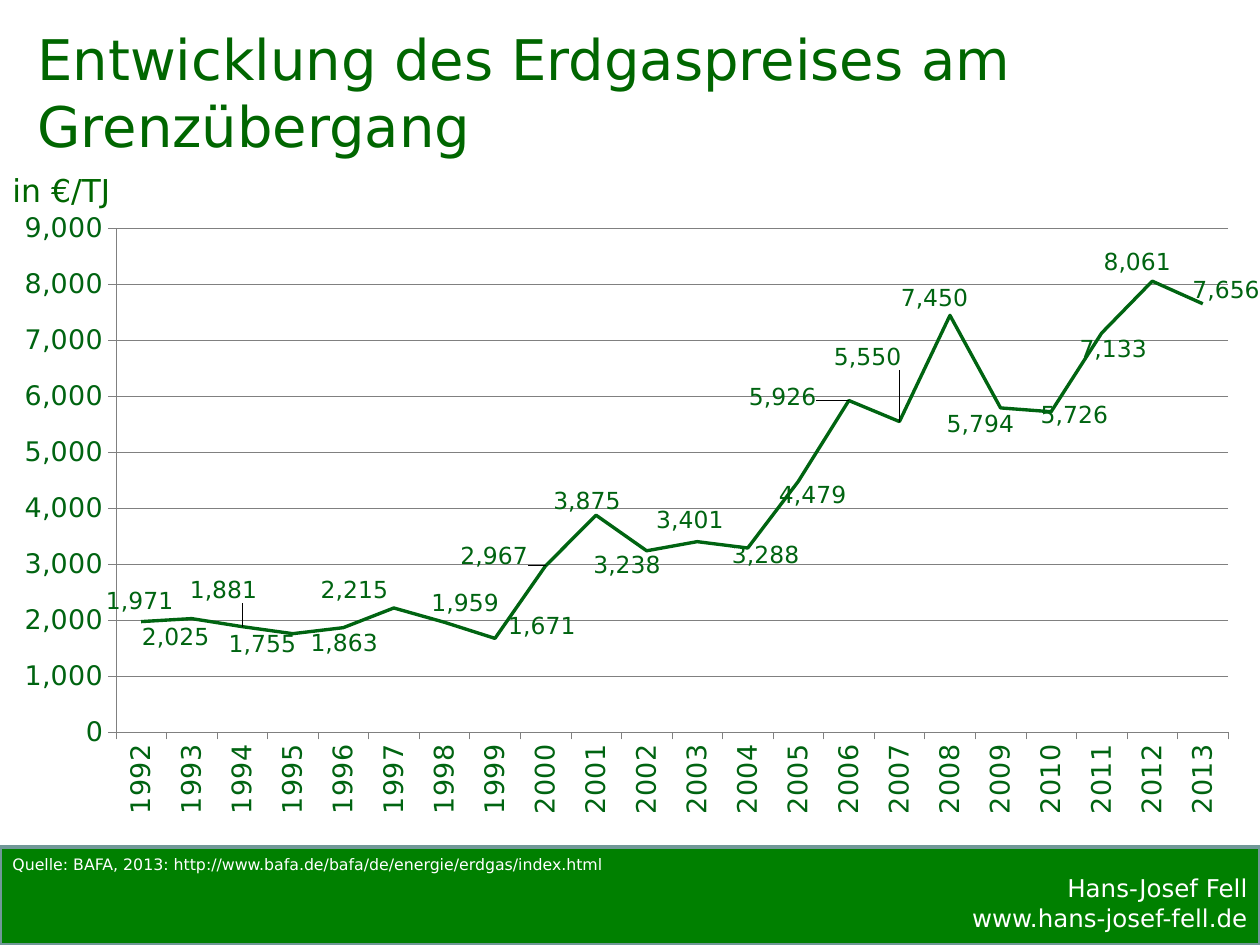
from lxml import etree
from pptx import Presentation
from pptx.chart.data import CategoryChartData
from pptx.dml.color import RGBColor
from pptx.enum.chart import XL_CHART_TYPE, XL_LABEL_POSITION, XL_MARKER_STYLE, XL_TICK_MARK
from pptx.enum.shapes import MSO_SHAPE
from pptx.enum.text import MSO_ANCHOR, PP_ALIGN
from pptx.oxml.ns import qn
from pptx.util import Emu, Pt

LINE = XL_CHART_TYPE.LINE
LABEL_RIGHT = XL_LABEL_POSITION.RIGHT
NO_MARKER = XL_MARKER_STYLE.NONE
TICK_OUT, TICK_NONE = XL_TICK_MARK.OUTSIDE, XL_TICK_MARK.NONE
RECT = MSO_SHAPE.RECTANGLE
LEFT, RIGHT = PP_ALIGN.LEFT, PP_ALIGN.RIGHT
TOP, BOTTOM = MSO_ANCHOR.TOP, MSO_ANCHOR.BOTTOM

WHITE = RGBColor(0xFF, 0xFF, 0xFF)
GREEN = RGBColor(0x00, 0x66, 0x00)
CHART_GREEN = RGBColor(0x00, 0x64, 0x11)
BAND_GREEN = RGBColor(0x00, 0x80, 0x00)
BAND_EDGE = RGBColor(0x70, 0x98, 0x97)
GRAY = RGBColor(0x80, 0x80, 0x80)

FONT = "DejaVu Sans"
PX = 914400 / 126
WIDTH, HEIGHT = 1260, 945

FIRST_YEAR = 1992
CHART_BOX = (0, 212, 1260, 619)
PLOT = (0.092, 0.027, 0.884, 0.813)  # inner plot area, share of the chart
AXIS_MAX = 9000
LABEL_REACH = 38  # from a point to the centre of a label on its right

# price in €/TJ, then the centre of its label on the slide in px
PRICES = [
    (1971, 139, 601), (2025, 175, 637), (1881, 223, 590), (1755, 262, 644),
    (1863, 344, 643), (2215, 354, 590), (1959, 465, 603), (1671, 542, 626),
    (2967, 494, 556), (3875, 587, 501), (3238, 627, 565), (3401, 690, 520),
    (3288, 766, 555), (4479, 813, 495), (5926, 783, 397), (5550, 868, 357),
    (7450, 935, 298), (5794, 981, 424), (5726, 1075, 415), (7133, 1114, 349),
    (8061, 1138, 262), (7656, 1227, 290),
]


def px(n):
    return Emu(round(n * PX))


def manual_layout(**values):
    layout = etree.Element(qn("c:layout"))
    manual = etree.SubElement(layout, qn("c:manualLayout"))
    for name, value in values.items():
        etree.SubElement(manual, qn(f"c:{name}")).set("val", str(value))
    return layout


def label_offset(i, value, cx, cy):
    """Shift of a label from its place right of the point, as share of the chart."""
    left, top, width, height = CHART_BOX
    x, y, w, h = PLOT
    point_x = left + width * (x + w * (i + 0.5) / len(PRICES))
    point_y = top + height * (y + h * (1 - value / AXIS_MAX))
    return (round((cx - point_x - LABEL_REACH) / width, 4),
            round((cy - point_y) / height, 4))


class SlideBuilder:
    def __init__(self, slide, font):
        self.s = slide
        self.font = font

    def style(self, font, size, color):
        font.name, font.size = self.font, Pt(size)
        font.color.rgb = color

    def rect(self, box, fill, line, line_width):
        sp = self.s.shapes.add_shape(RECT, *map(px, box))
        sp.shadow.inherit = False
        sp.fill.solid()
        sp.fill.fore_color.rgb = fill
        sp.line.color.rgb = line
        sp.line.width = Pt(line_width)

    def text(self, box, lines, size, color, align=LEFT, anchor=TOP, wrap=True):
        tf = self.s.shapes.add_textbox(*map(px, box)).text_frame
        tf.word_wrap = wrap
        tf.vertical_anchor = anchor
        for i, line in enumerate(lines):
            p = tf.add_paragraph() if i else tf.paragraphs[0]
            p.alignment = align
            r = p.add_run()
            r.text = line
            self.style(r.font, size, color)

    def axis(self, axis, size):
        axis.major_tick_mark = TICK_OUT
        axis.minor_tick_mark = TICK_NONE
        axis.format.line.color.rgb = GRAY
        axis.format.line.width = Pt(0.25)
        self.style(axis.tick_labels.font, size, CHART_GREEN)

    def price_chart(self, box, prices):
        data = CategoryChartData(number_format="#,##0")
        data.categories = [str(FIRST_YEAR + i) for i in range(len(prices))]
        data.add_series("Series 1", [value for value, _, _ in prices])
        chart = self.s.shapes.add_chart(LINE, *map(px, box), data).chart
        chart.has_legend = chart.has_title = False
        chart.font.name, chart.font.size = self.font, Pt(17.3)

        years, values = chart.category_axis, chart.value_axis
        self.axis(years, 15.4)
        years._element.find(qn("c:txPr")).find(qn("a:bodyPr")).set("rot", "-5400000")
        self.axis(values, 15.4)
        values.minimum_scale, values.maximum_scale, values.major_unit = 0, AXIS_MAX, 1000
        values.tick_labels.number_format = "#,##0"
        values.tick_labels.number_format_is_linked = False
        values.has_major_gridlines = True
        grid = values.major_gridlines.format.line
        grid.color.rgb = GRAY
        grid.width = Pt(0.25)

        plot = chart.plots[0]
        plot.vary_by_categories = False
        area = plot._element.getparent()
        for old in area.findall(qn("c:layout")):
            area.remove(old)
        x, y, w, h = PLOT
        area.insert(0, manual_layout(layoutTarget="inner", xMode="edge", yMode="edge",
                                     x=x, y=y, w=w, h=h))
        self.price_line(plot.series[0], prices)

    def price_line(self, series, prices):
        series.smooth = False
        series.marker.style = NO_MARKER
        series.format.line.color.rgb = CHART_GREEN
        series.format.line.width = Pt(1.92)
        labels = series.data_labels
        labels.show_value = True
        labels.number_format = "#,##0"
        labels.number_format_is_linked = False
        self.style(labels.font, 13.4, CHART_GREEN)
        for i, price in enumerate(prices):
            label = series.points[i].data_label
            self.style(label.font, 13.4, CHART_GREEN)
            label.position = LABEL_RIGHT
        for i, label in enumerate(labels._element.findall(qn("c:dLbl"))):
            dx, dy = label_offset(i, *prices[i])
            label.insert(1, manual_layout(x=dx, y=dy))


def main():
    prs = Presentation()
    prs.slide_width, prs.slide_height = px(WIDTH), px(HEIGHT)
    b = SlideBuilder(prs.slides.add_slide(prs.slide_layouts[6]), FONT)

    b.rect((0, 847, WIDTH, 98), BAND_GREEN, BAND_EDGE, 2)
    b.text((748, 867, 512, 78), ["Hans-Josef Fell", "www.hans-josef-fell.de"],
           14, WHITE, align=RIGHT)
    b.text((25, 16, 1201, 149), ["Entwicklung des Erdgaspreises am Grenzübergang"],
           32, GREEN, anchor=BOTTOM)
    b.price_chart(CHART_BOX, PRICES)
    b.text((0, 849, 638, 32),
           ["Quelle: BAFA, 2013: http://www.bafa.de/bafa/de/energie/erdgas/index.html"],
           9, WHITE, wrap=False)
    b.text((0, 165, 135, 50), ["in €/TJ"], 18, GREEN, wrap=False)

    prs.save("out.pptx")


if __name__ == "__main__":
    main()
